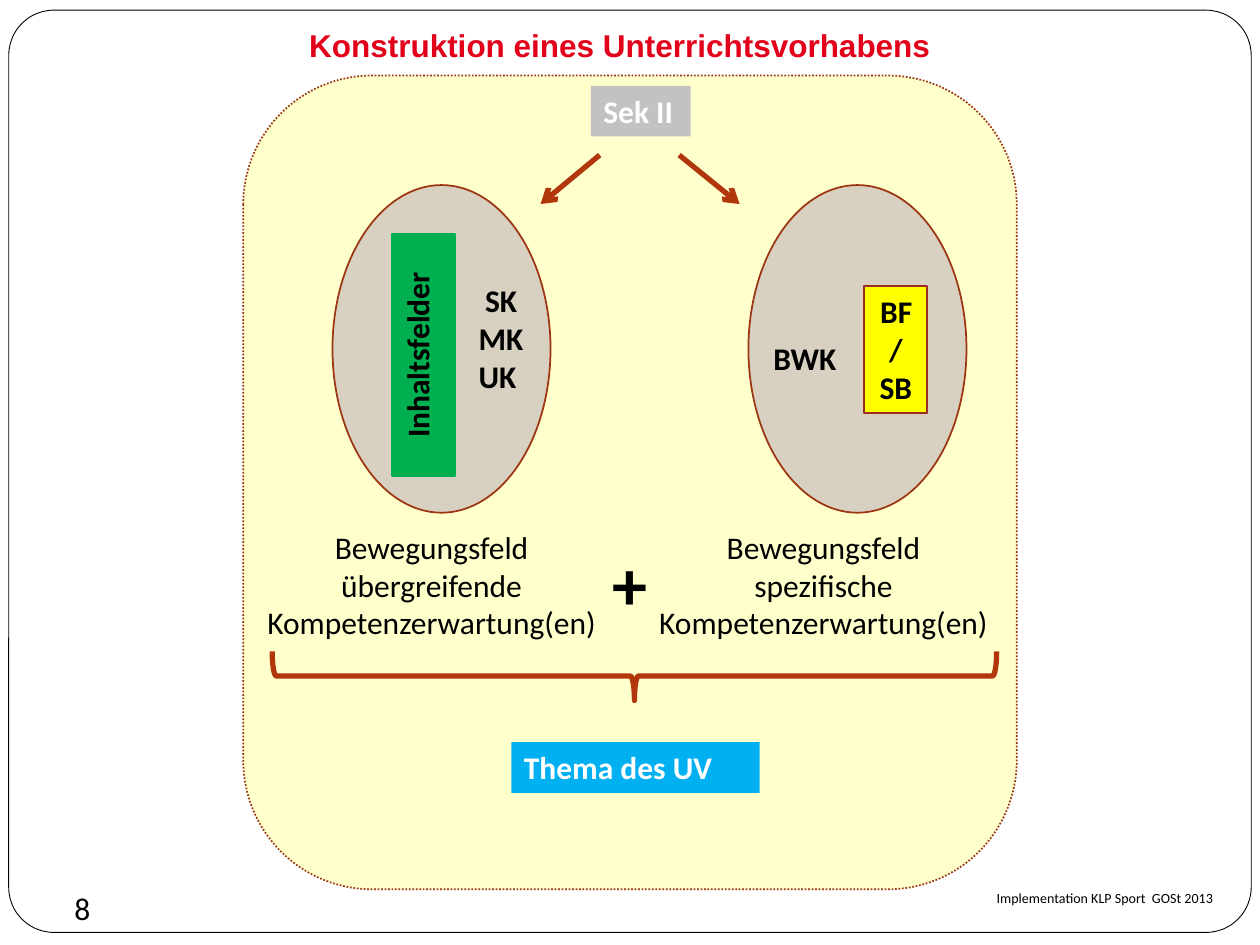
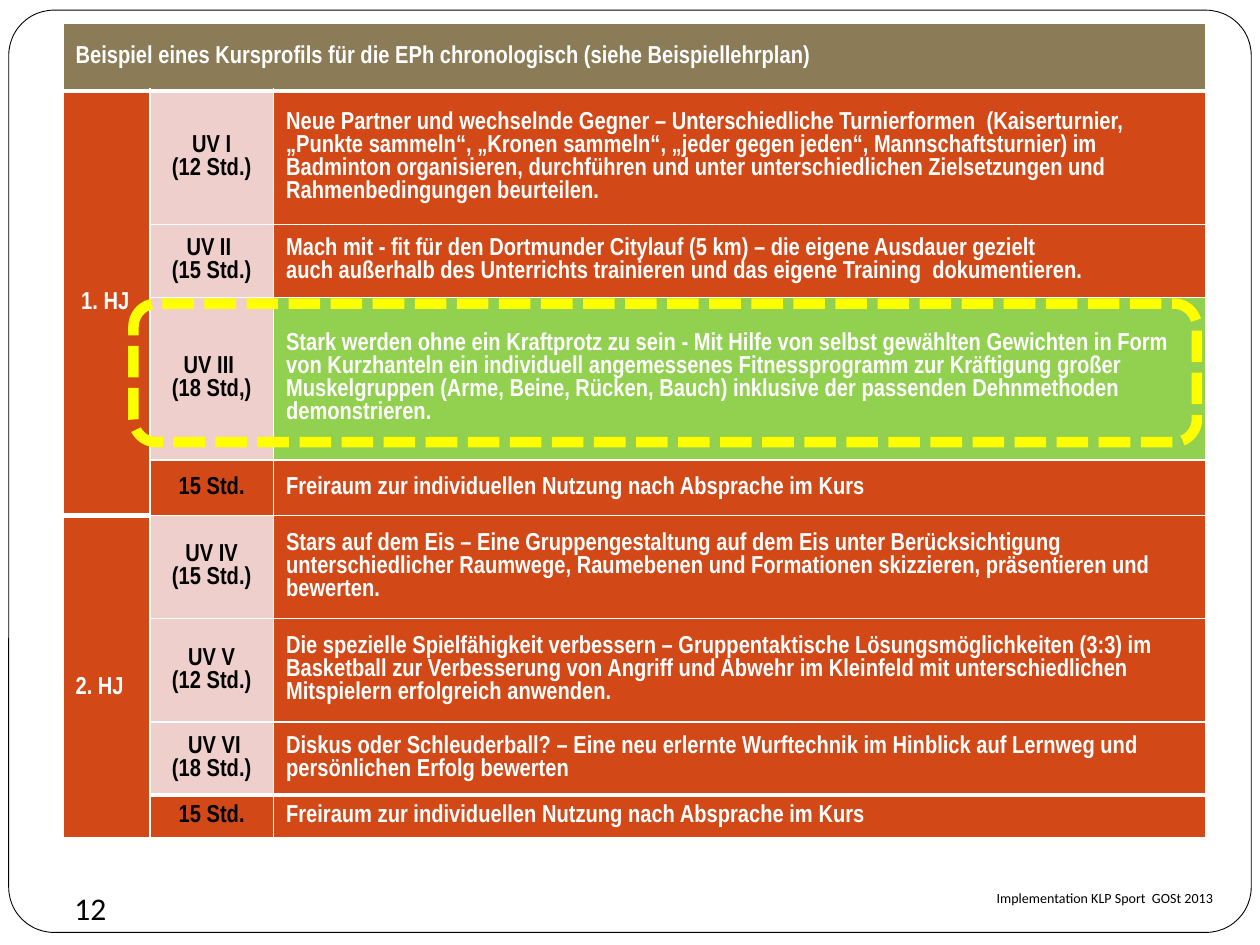
from pptx import Presentation
from pptx.dml.color import RGBColor
from pptx.enum.dml import MSO_LINE
from pptx.enum.shapes import MSO_CONNECTOR, MSO_SHAPE
from pptx.enum.text import MSO_ANCHOR, PP_ALIGN
from pptx.oxml.ns import qn
from pptx.util import Pt
from lxml import etree

ROUND = MSO_SHAPE.ROUNDED_RECTANGLE
RECT = MSO_SHAPE.RECTANGLE
OVAL = MSO_SHAPE.OVAL
BRACE = MSO_SHAPE.RIGHT_BRACE
STRAIGHT = MSO_CONNECTOR.STRAIGHT
DOTS = MSO_LINE.ROUND_DOT
DASH = MSO_LINE.SQUARE_DOT
LEFT, MID = PP_ALIGN.LEFT, PP_ALIGN.CENTER
TOP, CENTER = MSO_ANCHOR.TOP, MSO_ANCHOR.MIDDLE

BLACK, WHITE, RED = "000000", "FFFFFF", "E2001A"
RUST, BRICK, BROWN = "B1360B", "9C3511", "9B2D1F"
CREAM, SAND, GREY = "FFFFCC", "D8D0C0", "C3C1C1"
GREEN, BLUE, YELLOW = "00B050", "00B0F0", "FFFF00"
ORANGE, PINK, LIME, OLIVE = "D34817", "EFCFCC", "92D050", "8B7B57"

HEAD = "Beispiel eines Kursprofils für die EPh chronologisch (siehe Beispiellehrplan)"
FREE = "Freiraum zur individuellen Nutzung nach Absprache im Kurs"
PLAN = [
    ("UV I\n(12 Std.)",
     "Neue Partner und wechselnde Gegner – Unterschiedliche Turnierformen  (Kaiserturnier, "
     "„Punkte sammeln“, „Kronen sammeln“, „jeder gegen jeden“, Mannschaftsturnier) im "
     "Badminton organisieren, durchführen und unter unterschiedlichen Zielsetzungen und  "
     "Rahmenbedingungen beurteilen.", PINK, ORANGE),
    ("UV II \n(15 Std.)",
     "Mach mit - fit für den Dortmunder Citylauf (5 km) – die eigene Ausdauer gezielt\n"
     "auch außerhalb des Unterrichts trainieren und das eigene Training  dokumentieren.",
     PINK, ORANGE),
    ("UV III \n(18 Std,)",
     "Stark werden ohne ein Kraftprotz zu sein - Mit Hilfe von selbst gewählten Gewichten "
     "in Form von Kurzhanteln ein individuell angemessenes Fitnessprogramm zur Kräftigung "
     "großer Muskelgruppen (Arme, Beine, Rücken, Bauch) inklusive der passenden "
     "Dehnmethoden demonstrieren.", PINK, LIME),
    ("15 Std.", FREE, ORANGE, ORANGE),
    ("UV IV\n(15 Std.)",
     "Stars auf dem Eis – Eine Gruppengestaltung auf dem Eis unter Berücksichtigung\n"
     "unterschiedlicher Raumwege, Raumebenen und Formationen skizzieren, präsentieren "
     "und bewerten.", PINK, ORANGE),
    ("UV V\n(12 Std.)",
     "Die spezielle Spielfähigkeit verbessern – Gruppentaktische Lösungsmöglichkeiten (3:3) "
     "im Basketball zur Verbesserung von Angriff und Abwehr im Kleinfeld mit "
     "unterschiedlichen Mitspielern erfolgreich anwenden.", PINK, ORANGE),
    (" UV VI\n(18 Std.)",
     "Diskus oder Schleuderball? – Eine neu erlernte Wurftechnik im Hinblick auf Lernweg "
     "und persönlichen Erfolg bewerten", PINK, ORANGE),
    ("15 Std.", FREE, ORANGE, ORANGE),
]
COLS = [49.7, 70.6, 532.8]
ROWS = [38.9, 76.3, 41.8, 92.9, 31.7, 59, 59, 41.8, 24.5]
HEAVY = {(1, 0), (1, 1), (1, 2), (5, 0), (8, 1), (8, 2)}


def tint(code):
    """Turn a hex string into a colour."""
    return RGBColor.from_string(code)


def write(frame, text, size=18, color=BLACK, bold=False, align=LEFT, font="Calibri"):
    """Fill a text frame, one paragraph per line of text."""
    for i, line in enumerate(text.split("\n")):
        para = frame.add_paragraph() if i else frame.paragraphs[0]
        para.alignment = align
        run = para.add_run()
        run.text = line
        run.font.name, run.font.size, run.font.bold = font, Pt(size), bold
        run.font.color.rgb = tint(color)


def label(shapes, box, text, inset=None, **style):
    """Add a wrapping text box."""
    frame = shapes.add_textbox(*map(Pt, box)).text_frame
    frame.word_wrap = True
    if inset is not None:
        frame.margin_left = frame.margin_right = frame.margin_bottom = 0
        frame.margin_top = Pt(inset)
    write(frame, text, **style)


def form(shapes, kind, box, fill=None, line=None, width=1, dash=None):
    """Add a preset shape without a shadow."""
    shape = shapes.add_shape(kind, *map(Pt, box))
    shape.shadow.inherit = False
    if fill:
        shape.fill.solid()
        shape.fill.fore_color.rgb = tint(fill)
    else:
        shape.fill.background()
    if line:
        shape.line.color.rgb = tint(line)
        shape.line.width = Pt(width)
        if dash:
            shape.line.dash_style = dash
    else:
        shape.line.fill.background()
    return shape


def tag(shapes, box, text, fill, line=None, turn=None, **style):
    """Add a filled rectangle with bold text."""
    shape = form(shapes, RECT, box, fill, line)
    frame = shape.text_frame
    frame.word_wrap = True
    frame.vertical_anchor = TOP
    if turn:
        frame._txBody.bodyPr.set("vert", turn)
    write(frame, text, bold=True, **style)


def arrow(shapes, start, end):
    """Draw a thick line with an open head at its end."""
    link = shapes.add_connector(STRAIGHT, *map(Pt, start + end))
    link.line.color.rgb = tint(RUST)
    link.line.width = Pt(3)
    etree.SubElement(link.line._get_or_add_ln(), qn("a:tailEnd"), type="arrow")
    etree.SubElement(link._element.spPr, qn("a:effectLst"))


def base(deck, number):
    """Add a slide with the frame, footer and page number."""
    shapes = deck.slides.add_slide(deck.slide_layouts[6]).shapes
    frame = form(shapes, ROUND, (5, 5.8, 710, 527), WHITE, BLACK, 0.5)
    frame.adjustments[0] = 0.049
    label(shapes, (569.5, 508.3, 164, 26.6), "Implementation KLP Sport  GOSt 2013", 0, size=8)
    label(shapes, (42.5, 508.3, 23, 26.6), number, 0)
    return shapes


def disc(shapes, x, y):
    """Start a group on an oval and return its shapes."""
    group = shapes.add_group_shape().shapes
    form(group, OVAL, (x, y, 124.6, 187.2), SAND, BRICK)
    return group


def fields(shapes, x, y):
    """Draw the oval of the content fields."""
    group = disc(shapes, x, y)
    label(group, (x + 67.8, y + 51.2, 57, 72.7), "SK\nMK\nUK ", bold=True, align=MID)
    tag(group, (x + 33.9, y + 28, 36, 138.2), "Inhaltsfelder", GREEN, GREEN,
        "vert270", align=MID)


def moves(shapes, x, y):
    """Draw the oval of the movement fields."""
    group = disc(shapes, x, y)
    label(group, (x + 5.8, y + 84.2, 57, 29), "BWK ", bold=True, align=MID)
    tag(group, (x + 66.2, y + 57.6, 36, 72.7), "BF/ SB", YELLOW, BROWN, align=MID)


def panel(shapes, box):
    """Draw the diagram from school level to topic."""
    x, y, w, h = box
    form(shapes, ROUND, box, CREAM, BRICK, 1, DOTS)
    tag(shapes, (x + 198.7, y + 5.8, 57, 29), "Sek II", GREY, color=WHITE)
    fields(shapes, x + 51, y + 62.6)
    moves(shapes, x + 288.7, y + 62.6)
    for start, end in ((203.7, 169.9), (249.1, 283.6)):
        arrow(shapes, (x + start, y + 45.4), (x + end, y + 73.4))
    for left, wide, text in ((0, 215.3, "Bewegungsfeld übergreifende"),
                             (215.3, 232.6, "Bewegungsfeld\nspezifische")):
        label(shapes, (x + left, y + 254.9, wide, 72.7),
              text + "\nKompetenzerwartung(en)", align=MID)
    label(shapes, (x + 203.7, y + 262.1, 33.8, 55.4), "+", size=40, bold=True)
    brace = form(shapes, BRACE, (x + 209.5, y + 136.1, 28, 414), None, RUST, 3)
    brace.rotation = 90
    tag(shapes, (x + 153.3, y + 380.9, 141.8, 29), "Thema des UV", BLUE, color=WHITE)


def edge(cell, side, width):
    """Set one white border of a cell."""
    line = etree.SubElement(cell._tc.get_or_add_tcPr(), qn("a:" + side), w=str(Pt(width)))
    fill = etree.SubElement(line, qn("a:solidFill"))
    etree.SubElement(fill, qn("a:srgbClr"), val=WHITE)


def paint(cell, row, col, fill):
    """Set the borders, fill and anchor of a cell."""
    edge(cell, "lnL", 1)
    edge(cell, "lnR", 1)
    edge(cell, "lnT", 3 if (row, col) in HEAVY else 1)
    edge(cell, "lnB", 3 if (row + 1, col) in HEAVY else 1)
    cell.fill.solid()
    cell.fill.fore_color.rgb = tint(fill)
    cell.vertical_anchor = CENTER


def fill_in(cell, text, color=WHITE, align=LEFT):
    """Write the bold narrow text of a cell."""
    write(cell.text_frame, text, 14, color, True, align, "Arial Narrow")


def course(shapes, x, y):
    """Build the course table and mark its third unit."""
    size = map(Pt, (x, y, sum(COLS), sum(ROWS)))
    table = shapes.add_table(len(ROWS), len(COLS), *size).table
    table.first_row = table.horz_banding = False
    for col, width in zip(table.columns, COLS):
        col.width = Pt(width)
    for row, height in zip(table.rows, ROWS):
        row.height = Pt(height)
    for col in range(3):
        paint(table.cell(0, col), 0, col, OLIVE)
    for r, (unit, text, tone, back) in enumerate(PLAN, 1):
        for c, fill in enumerate((ORANGE, tone, back)):
            paint(table.cell(r, c), r, c, fill)
        fill_in(table.cell(r, 1), unit, BLACK, MID)
        fill_in(table.cell(r, 2), text)
    table.cell(0, 0).merge(table.cell(0, 2))
    fill_in(table.cell(0, 0), HEAD)
    for top, name in ((1, "1. HJ"), (5, "2. HJ")):
        half = table.cell(top, 0)
        half.merge(table.cell(top + 3, 0))
        fill_in(half, name)
    table.cell(1, 0).margin_left = Pt(10.4)
    table.cell(1, 0).margin_right = Pt(3)
    table.cell(5, 0).margin_top = Pt(16.7)
    form(shapes, ROUND, (x + 40.3, y + 160.5, 607.7, 79.2), None, YELLOW, 6, DASH)


def main():
    """Build both slides and save them."""
    deck = Presentation()
    deck.slide_width, deck.slide_height = Pt(720), Pt(540)
    shapes = base(deck, "8")
    label(shapes, (36.7, 3.6, 635, 33), "Konstruktion eines Unterrichtsvorhabens", 11.5,
          color=RED, bold=True, align=MID, font="Arial")
    panel(shapes, (139, 43.2, 442, 465))
    course(base(deck, "12"), 36, 13)
    deck.save("out.pptx")


if __name__ == "__main__":
    main()
